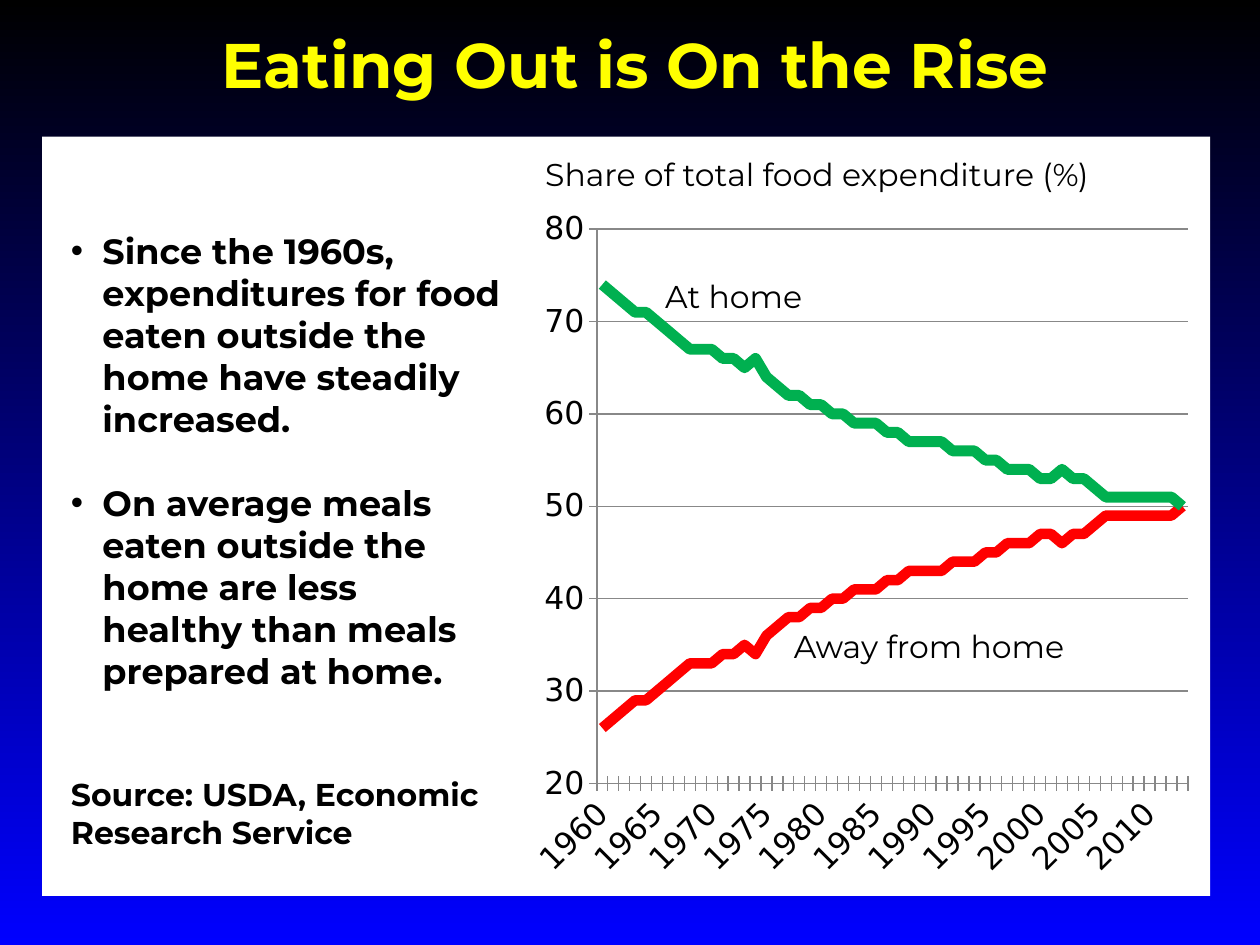
import pptx
import pptx.chart.data
import pptx.dml.color
import pptx.enum.chart
import pptx.enum.text
import pptx.oxml
import pptx.oxml.ns
import pptx.util
from lxml import etree

Pt = pptx.util.Pt
qn = pptx.oxml.ns.qn
ANCHOR = pptx.enum.text.MSO_ANCHOR
ALIGN = pptx.enum.text.PP_ALIGN

# Content
TITLE = "Eating Out is On the Rise"
POINTS = [
    "Since the 1960s, expenditures for food eaten outside the home have steadily increased.",
    "On average meals eaten outside the home are less healthy than meals prepared at home.",
]
SOURCE = "Source: USDA, Economic Research Service"
CHART_LABELS = [  # text, (left, top, width, height)
    ("Share of total food expenditure (%)", (304.5, 85, 366, 30)),
    ("At home", (373, 155, 109, 30)),
    ("Away from home", (446.5, 354.5, 184, 29)),
]
FIRST_YEAR = 1960
AWAY_SHARE = [
    26, 27, 28, 29, 29, 30, 31, 32, 33, 33, 33, 34, 34, 35, 34, 36, 37, 38,
    38, 39, 39, 40, 40, 41, 41, 41, 42, 42, 43, 43, 43, 43, 44, 44, 44, 45,
    45, 46, 46, 46, 47, 47, 46, 47, 47, 48, 49, 49, 49, 49, 49, 49, 49, 50,
]
HOME_SHARE = [100 - share for share in AWAY_SHARE]

THEME = {
    "font": "Montserrat", "axis_font": "DejaVu Sans",
    "title_size": 36, "point_size": 20, "label_size": 18,
    "title": "FFFF00", "text": "000000", "panel": "FFFFFF", "grid": "888888",
    "away": "FF0000", "home": "00B050", "top": "000000", "bottom": "0000FF",
}
BULLET_INDENT = 18


def rgb(key):
    return pptx.dml.color.RGBColor.from_string(THEME[key])


def place(box):
    return [Pt(length) for length in box]


def write(paragraph, text, size="label_size", color="text", bold=False,
          align=ALIGN.LEFT, before=0, bullet=False):
    paragraph.alignment = align
    paragraph.space_before = Pt(before)
    run = paragraph.add_run()
    run.text = text
    run.font.name = THEME["font"]
    run.font.size = Pt(THEME[size])
    run.font.bold = bold
    run.font.color.rgb = rgb(color)
    if bullet:
        properties = paragraph._p.get_or_add_pPr()
        properties.set("marL", str(Pt(BULLET_INDENT)))
        properties.set("indent", str(-Pt(BULLET_INDENT)))
        etree.SubElement(properties, qn("a:buFont")).set("typeface", "Arial")
        etree.SubElement(properties, qn("a:buChar")).set("char", "•")


def add_text_frame(slide, box):
    frame = slide.shapes.add_textbox(*place(box)).text_frame
    frame.word_wrap = True
    return frame


def style_axis(axis):
    axis.major_tick_mark = pptx.enum.chart.XL_TICK_MARK.CROSS
    axis.minor_tick_mark = pptx.enum.chart.XL_TICK_MARK.NONE
    axis.format.line.color.rgb = rgb("grid")
    axis.format.line.width = Pt(0.75)


def add_share_chart(slide):
    data = pptx.chart.data.CategoryChartData()
    data.categories = [str(FIRST_YEAR + i) for i in range(len(AWAY_SHARE))]
    data.add_series("Series 1", AWAY_SHARE)
    data.add_series("Series 2", HOME_SHARE)
    chart = slide.shapes.add_chart(
        pptx.enum.chart.XL_CHART_TYPE.LINE, *place((24, 78, 667.5, 434)), data).chart
    chart.has_title = False
    chart.has_legend = False
    chart.font.name = THEME["axis_font"]
    chart.font.size = Pt(THEME["label_size"])
    chart.font.color.rgb = rgb("text")

    # Lines
    chart.plots[0].vary_by_categories = False
    for series, color, width in zip(chart.plots[0].series, ("away", "home"), (6, 6.25)):
        series.smooth = False
        series.format.line.color.rgb = rgb(color)
        series.format.line.width = Pt(width)
        series.marker.style = pptx.enum.chart.XL_MARKER_STYLE.NONE

    # Axes
    shares, years = chart.value_axis, chart.category_axis
    style_axis(shares)
    style_axis(years)
    shares.minimum_scale, shares.maximum_scale, shares.major_unit = 20, 80, 10
    shares.tick_labels.number_format = "#,##0"
    shares.tick_labels.number_format_is_linked = False
    shares.has_major_gridlines = True
    shares.major_gridlines.format.line.color.rgb = rgb("grid")
    shares.major_gridlines.format.line.width = Pt(0.75)
    years.tick_labels.font.size = Pt(THEME["label_size"])
    years._element.find(qn("c:txPr")).find(qn("a:bodyPr")).set("rot", "-2700000")
    skip = etree.Element(qn("c:tickLblSkip"))
    skip.set("val", "6")
    years._element.find(qn("c:noMultiLvlLbl")).addprevious(skip)

    # White panel behind the plot
    space = chart._chartSpace
    space.find(qn("c:chart")).addnext(pptx.oxml.parse_xml(
        f'<c:spPr {pptx.oxml.ns.nsdecls("c", "a")}><a:solidFill>'
        f'<a:srgbClr val="{THEME["panel"]}"/></a:solidFill>'
        '<a:ln><a:noFill/></a:ln></c:spPr>'))

    # Plot position as fractions of the chart
    plot_area = space.find(qn("c:chart")).find(qn("c:plotArea"))
    for layout in plot_area.findall(qn("c:layout")):
        plot_area.remove(layout)
    layout = etree.Element(qn("c:layout"))
    manual = etree.SubElement(layout, qn("c:manualLayout"))
    for tag, value in [("layoutTarget", "inner"), ("xMode", "edge"), ("yMode", "edge"),
                       ("x", 0.475), ("y", 0.122), ("w", 0.506), ("h", 0.73)]:
        etree.SubElement(manual, qn("c:" + tag)).set("val", str(value))
    plot_area.insert(0, layout)


def main():
    deck = pptx.Presentation()
    deck.slide_width, deck.slide_height = Pt(720), Pt(540)
    slide = deck.slides.add_slide(deck.slide_layouts[5])

    # Background
    backdrop = slide.background.fill
    backdrop.gradient()
    backdrop.gradient_angle = 270
    for stop, color in zip(backdrop.gradient_stops, ("top", "bottom")):
        stop.color.rgb = rgb(color)

    # Title
    title = slide.shapes.title
    title.left, title.top, title.width, title.height = place((18, -30, 690, 132))
    title.text_frame.vertical_anchor = ANCHOR.MIDDLE
    write(title.text_frame.paragraphs[0], TITLE, size="title_size", color="title",
          bold=True, align=ALIGN.CENTER)

    add_share_chart(slide)

    # Points and source
    message = add_text_frame(slide, (33.5, 127.5, 263, 366))
    for i, point in enumerate(POINTS):
        paragraph = message.add_paragraph() if i else message.paragraphs[0]
        write(paragraph, point, size="point_size", bold=True, bullet=True,
              before=24 if i else 0)
    write(message.add_paragraph(), SOURCE, bold=True, before=48)

    # Chart labels
    for text, box in CHART_LABELS:
        write(add_text_frame(slide, box).paragraphs[0], text)

    deck.save("out.pptx")


if __name__ == "__main__":
    main()
